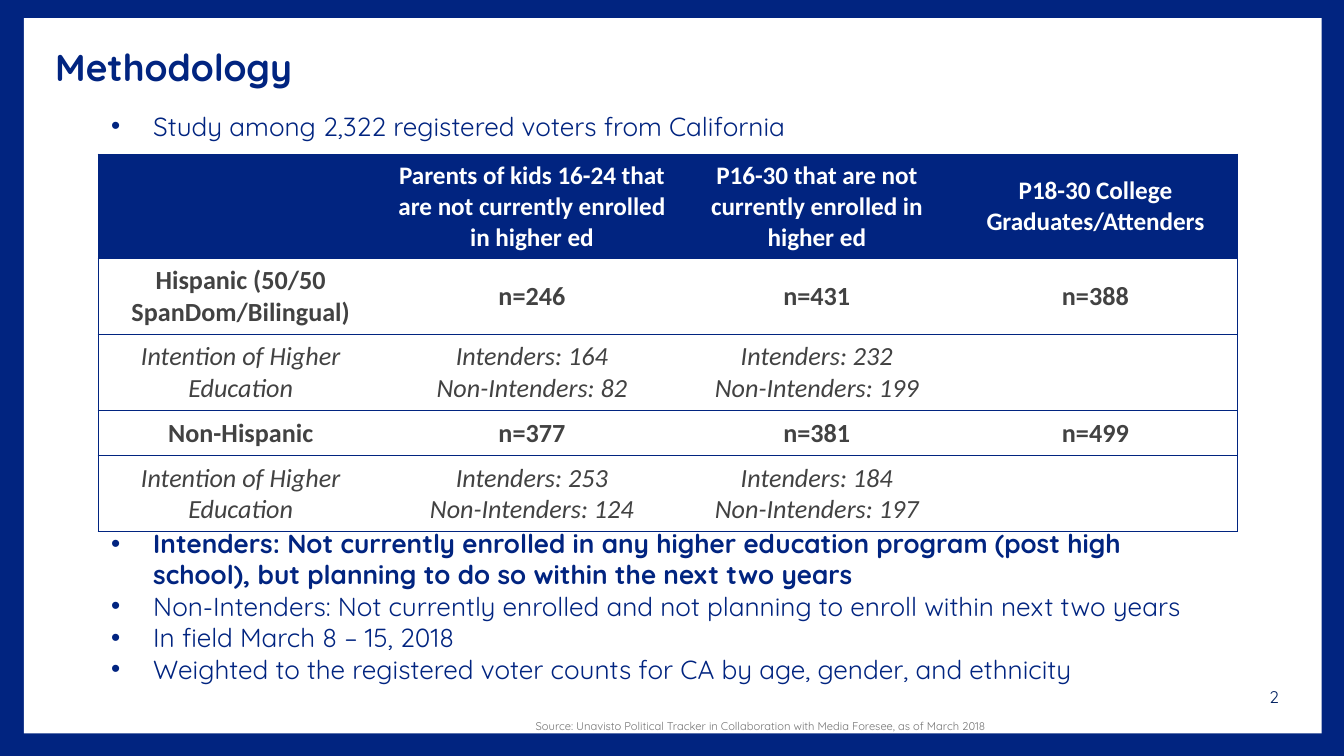
from lxml import etree
from pptx import Presentation
from pptx.dml.color import RGBColor
from pptx.enum import shapes, text
from pptx.oxml.ns import qn
from pptx.util import Pt

PX = 9525  # EMU in one px, 96 px to the inch
NAVY = RGBColor(0x01, 0x24, 0x80)
DARK_BLUE = RGBColor(0x00, 0x20, 0x60)
GRAY = RGBColor(0x74, 0x74, 0x74)
DARK_GRAY = RGBColor(0x42, 0x42, 0x42)
WHITE = RGBColor(0xFF, 0xFF, 0xFF)

COLUMNS = [204, 212, 195, 203]
ROW_HEIGHTS = [61, 29, 45, 29, 45]
HEADERS = [
    "",
    "Parents of kids 16-24 that are not currently enrolled in higher ed",
    "P16-30 that are not currently enrolled in higher ed",
    "P18-30 College Graduates/Attenders",
]
GROUPS = [
    ["Hispanic (50/50 SpanDom/Bilingual)", "n=246", "n=431", "n=388"],
    ["Intention of Higher Education", "Intenders: 164\nNon-Intenders: 82",
     "Intenders: 232\nNon-Intenders: 199", ""],
    ["Non-Hispanic", "n=377", "n=381", "n=499"],
    ["Intention of Higher Education", "Intenders: 253\nNon-Intenders: 124",
     "Intenders: 184\nNon-Intenders: 197", ""],
]
NOTES = [
    "Intenders: Not currently enrolled in any higher education program "
    "(post high school), but planning to do so within the next two years",
    "Non-Intenders: Not currently enrolled and not planning to enroll within next two years",
    "In field March 8 – 15, 2018",
    "Weighted to the registered voter counts for CA by age, gender, and ethnicity",
]


class SlideBuilder:
    font = "Quicksand"
    table_font = "Calibri"
    indent = 30

    def __init__(self, slide):
        self.slide = slide

    def style(self, paragraph, size, color, font=None, bold=False, italic=False, align=None):
        paragraph.alignment = align
        paragraph.font.name = font or self.font
        paragraph.font.size = Pt(size)
        paragraph.font.bold = bold
        paragraph.font.italic = italic
        paragraph.font.color.rgb = color

    def rectangle(self, left, top, width, height, color):
        shape = self.slide.shapes.add_shape(
            shapes.MSO_SHAPE.RECTANGLE, left * PX, top * PX, width * PX, height * PX)
        shape.shadow.inherit = False
        shape.fill.solid()
        shape.fill.fore_color.rgb = color
        shape.line.fill.background()

    def frame(self, left, top, width, height, middle=False, grow=False):
        box = self.slide.shapes.add_textbox(left * PX, top * PX, width * PX, height * PX)
        frame = box.text_frame
        frame.word_wrap = True
        if middle:
            frame.vertical_anchor = text.MSO_ANCHOR.MIDDLE
        if grow:
            frame.auto_size = text.MSO_AUTO_SIZE.SHAPE_TO_FIT_TEXT
        return frame

    def label(self, words, left, top, width, height, size, color,
              middle=True, spacing=None, **style):
        frame = self.frame(left, top, width, height, middle, grow=not middle)
        frame.text = words
        paragraph = frame.paragraphs[0]
        paragraph.line_spacing = spacing
        self.style(paragraph, size, color, **style)

    def bullets(self, items, left, top, width, height, bold_items=()):
        frame = self.frame(left, top, width, height, grow=True)
        frame.text = "\n".join(items)
        for index, paragraph in enumerate(frame.paragraphs):
            properties = paragraph._p.get_or_add_pPr()
            properties.set("marL", str(self.indent * PX))
            properties.set("indent", str(-self.indent * PX))
            etree.SubElement(properties, qn("a:buFont"), typeface="Arial")
            etree.SubElement(properties, qn("a:buChar"), char="•")
            self.style(paragraph, 14, NAVY, bold=index in bold_items)

    def border(self, cell, sides):
        properties = cell._tc.get_or_add_tcPr()
        for position, side in enumerate("LRTB"):
            line = etree.Element(qn(f"a:ln{side}"), w=str(Pt(0.5)))
            if side in sides:
                fill = etree.SubElement(line, qn("a:solidFill"))
                etree.SubElement(fill, qn("a:srgbClr"), val=str(NAVY))
            else:
                etree.SubElement(line, qn("a:noFill"))
            properties.insert(position, line)

    def table(self, rows, left, top, columns, heights):
        table = self.slide.shapes.add_table(
            len(rows), len(columns), left * PX, top * PX,
            sum(columns) * PX, sum(heights) * PX).table
        table.first_row = table.horz_banding = False
        for column, width in zip(table.columns, columns):
            column.width = width * PX
        for r, row in enumerate(rows):
            table.rows[r].height = heights[r] * PX
            header = r == 0
            detail = not header and r % 2 == 0
            for c, words in enumerate(row):
                cell = table.cell(r, c)
                cell.text = words
                cell.vertical_anchor = text.MSO_ANCHOR.MIDDLE
                cell.fill.solid()
                cell.fill.fore_color.rgb = NAVY if header else WHITE
                outer = {0: "L", len(row) - 1: "R"}.get(c, "")
                self.border(cell, "TB" + outer)
                for paragraph in cell.text_frame.paragraphs:
                    self.style(paragraph, 13.5 if header else 14,
                               WHITE if header else DARK_GRAY, font=self.table_font,
                               bold=not detail, italic=detail, align=text.PP_ALIGN.CENTER)


def main():
    presentation = Presentation()
    presentation.slide_width = 960 * PX
    presentation.slide_height = 540 * PX
    builder = SlideBuilder(presentation.slides.add_slide(presentation.slide_layouts[6]))

    # Navy frame around a white panel
    builder.rectangle(0, 0, 960, 540, NAVY)
    builder.rectangle(17, 13, 927, 511, WHITE)

    # Page number, title and source
    builder.label("2", 892, 483, 36, 29, 9, DARK_BLUE, align=text.PP_ALIGN.CENTER)
    builder.label("Methodology", 30, 22, 894, 55, 20, NAVY, spacing=0.9, bold=True)
    builder.label("Source: Unavisto Political Tracker in Collaboration with Media Foresee, "
                  "as of March 2018", 30, 509, 683, 19, 6, GRAY,
                  middle=False, align=text.PP_ALIGN.RIGHT)

    # Sample sizes
    builder.table([HEADERS] + GROUPS, 70, 110, COLUMNS, ROW_HEIGHTS)

    # Bullets above and below the table
    builder.bullets(["Study among 2,322 registered voters from California"], 70, 74, 722, 33)
    builder.bullets(NOTES, 70, 372, 814, 123, bold_items=(0,))

    presentation.save("out.pptx")


if __name__ == "__main__":
    main()
